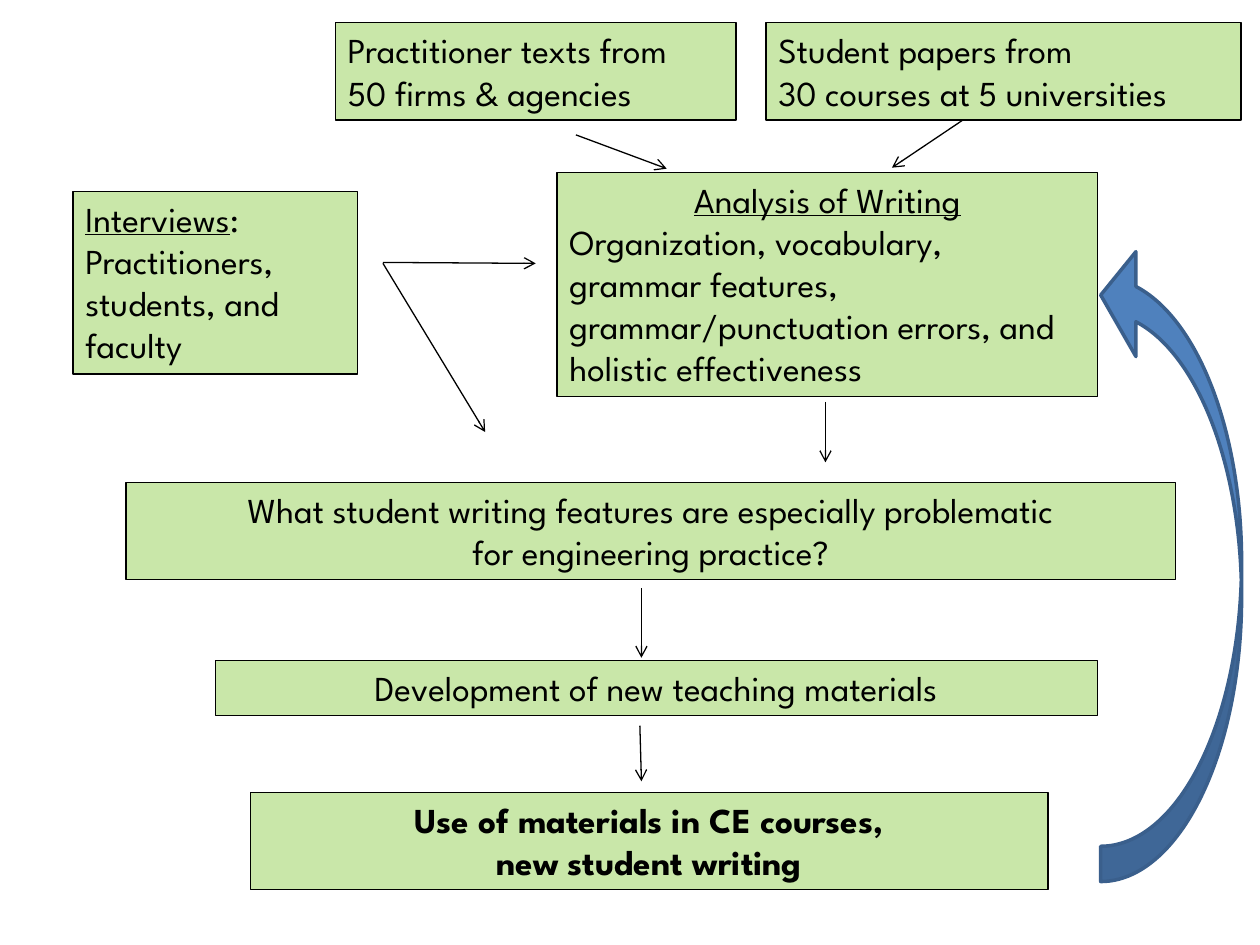
from lxml.etree import SubElement
from pptx import Presentation
from pptx.dml.color import RGBColor
from pptx.enum.shapes import MSO_CONNECTOR, MSO_SHAPE
from pptx.enum.text import MSO_ANCHOR, PP_ALIGN
from pptx.oxml.ns import qn
from pptx.util import Cm, Pt

COLORS = {"box": "92D050", "ink": "000000", "loop": "4F81BD", "loop_edge": "3A5F8C"}
FONT = "League Spartan"


def color(name):
    """Return a palette colour."""
    return RGBColor.from_string(COLORS[name])


def add_box(page, box, lines, align=PP_ALIGN.LEFT, bold=False):
    """Place a translucent bordered box with one paragraph per line."""
    shape = page.shapes.add_shape(MSO_SHAPE.RECTANGLE, *map(Cm, box))
    shape.shadow.inherit = False
    shape.fill.solid()
    shape.fill.fore_color.rgb = color("box")
    tint = shape.fill._xPr.find(qn("a:solidFill"))[0]
    SubElement(tint, qn("a:alpha"), val="49000")
    shape.line.color.rgb = color("ink")
    shape.line.width = Pt(0.75)
    frame = shape.text_frame
    frame.word_wrap = True
    frame.vertical_anchor = MSO_ANCHOR.TOP
    for index, line in enumerate(lines):
        para = frame.add_paragraph() if index else frame.paragraphs[0]
        para.alignment = align
        para.font.name = FONT
        para.font.size = Pt(20)
        para.font.bold = bold
        para.font.color.rgb = color("ink")
        para.add_run().text = line
    return frame.paragraphs


def add_arrow(page, origin, start, end):
    """Draw a thin open-headed arrow between two points relative to an origin."""
    left, top = origin
    points = (left + start[0], top + start[1], left + end[0], top + end[1])
    arrow = page.shapes.add_connector(MSO_CONNECTOR.STRAIGHT, *map(Cm, points))
    arrow.line.color.rgb = color("ink")
    arrow.line.width = Pt(0.75)
    SubElement(arrow.line._get_or_add_ln(), qn("a:tailEnd"), type="arrow")
    SubElement(arrow._element.spPr, qn("a:effectLst"))


def add_text_sources(page, box):
    """Place the two text collections and the arrows to their analysis."""
    left, top, width, height = box
    student_width = 9.58
    add_box(page, (left, top, 8.08, height),
            ["Practitioner texts from", "50 firms & agencies"])
    add_box(page, (left + width - student_width, top, student_width, height),
            ["Student papers from", "30 courses at 5 universities"])
    add_arrow(page, (left, top), (4.85, height + 0.3), (6.68, height + 0.98))
    add_arrow(page, (left, top), (12.65, height), (11.22, height + 0.96))


def add_interviews(page, box):
    """Place the interviews box and its two outgoing arrows."""
    left, top, width, height = box
    paragraphs = add_box(page, box, ["Interviews", "Practitioners,", "students, and", "faculty"])
    paragraphs[0].runs[0].font.underline = True
    paragraphs[0].add_run().text = ":"
    add_arrow(page, (left, top), (width + 0.51, 1.43), (width + 3.59, 1.45))
    add_arrow(page, (left, top), (width + 0.51, 1.45), (width + 2.57, height + 1.17))


def add_analysis(page, box):
    """Place the writing analysis box and the arrow below it."""
    left, top, width, height = box
    paragraphs = add_box(page, box, [
        "Analysis of Writing",
        "Organization, vocabulary,",
        "grammar features, grammar/punctuation errors, and holistic effectiveness",
    ])
    paragraphs[0].alignment = PP_ALIGN.CENTER
    paragraphs[0].font.underline = True
    paragraphs[0].runs[0].font.underline = True
    paragraphs[-1].space_after = Pt(6)
    add_arrow(page, (left, top), (5.41, height + 0.1), (5.41, height + 1.32))


def add_outcomes(page, box):
    """Stack the three outcome stages, centred text, with arrows between them."""
    left, top, width, height = box
    stages = [
        (0, 0, width, 1.96, False,
         ["What student writing features are especially problematic",
          "for engineering practice?"]),
        (1.8, 3.58, 17.78, 1.12, False, ["Development of new teaching materials"]),
        (2.51, height - 1.96, 16.08, 1.96, True,
         ["Use of materials in CE courses,", "new student writing"]),
    ]
    for across, down, stage_width, stage_height, bold, lines in stages:
        add_box(page, (left + across, top + down, stage_width, stage_height),
                lines, PP_ALIGN.CENTER, bold)
    add_arrow(page, (left, top), (10.39, 2.13), (10.39, 3.53))
    add_arrow(page, (left, top), (10.36, 4.9), (10.39, 6.02))


def add_feedback_loop(page, box):
    """Fit a curved arrow, turned upright, into the given box."""
    left, top, width, height = box
    shift = (height - width) / 2
    loop = page.shapes.add_shape(MSO_SHAPE.CURVED_UP_ARROW, Cm(left - shift),
                                 Cm(top + shift), Cm(height), Cm(width))
    loop.rotation = 270
    for index, value in enumerate((0.25, 0.745, 0.25)):
        loop.adjustments[index] = value
    loop.shadow.inherit = False
    loop.fill.solid()
    loop.fill.fore_color.rgb = color("loop")
    loop.line.color.rgb = color("loop_edge")
    loop.line.width = Pt(2)


def main():
    """Build the research process slide."""
    deck = Presentation()
    deck.slide_width, deck.slide_height = Cm(25.4), Cm(19.05)
    page = deck.slides.add_slide(deck.slide_layouts[6])
    add_text_sources(page, (6.76, 0.46, 18.26, 1.96))
    add_analysis(page, (11.23, 3.48, 10.9, 4.52))
    add_outcomes(page, (2.54, 9.73, 21.16, 8.21))
    add_interviews(page, (1.47, 3.86, 5.74, 3.68))
    add_feedback_loop(page, (22.19, 4.89, 2.84, 12.88))
    deck.save("out.pptx")


if __name__ == "__main__":
    main()
